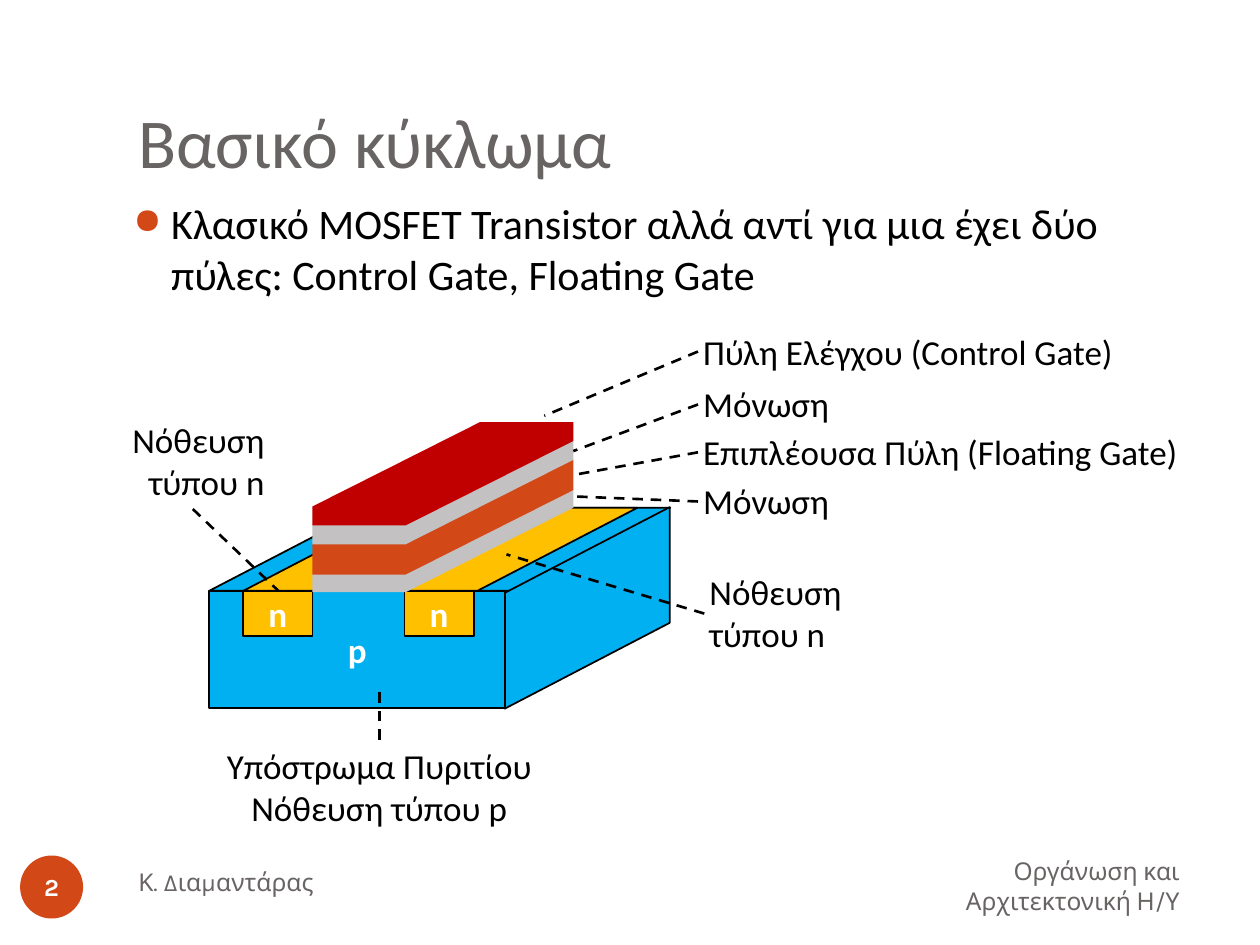
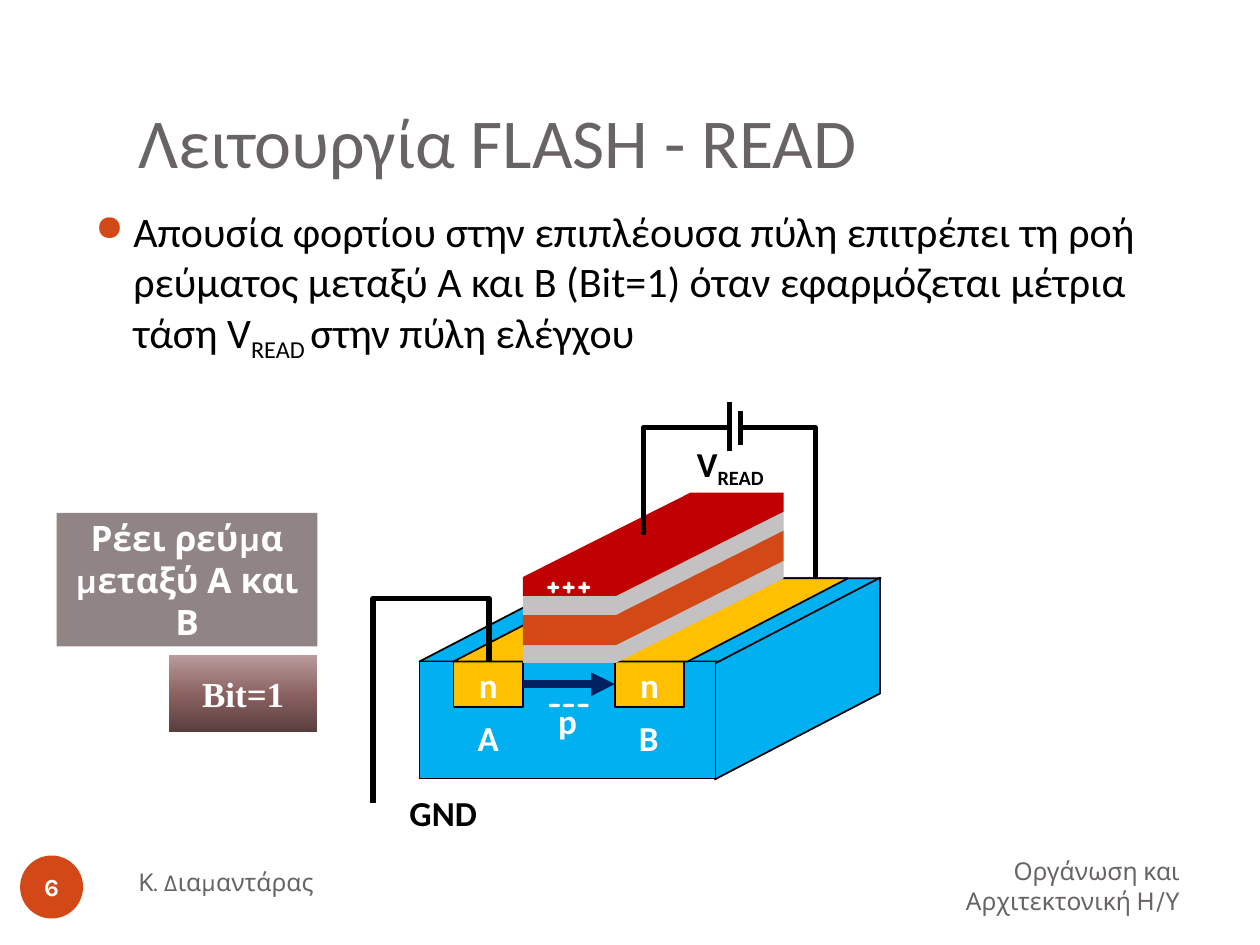
from copy import deepcopy
from dataclasses import dataclass

from lxml import etree
from pptx import Presentation
from pptx.dml.color import RGBColor
from pptx.enum.dml import MSO_LINE_DASH_STYLE as Dash
from pptx.enum.shapes import MSO_CONNECTOR as Connector, MSO_SHAPE as Shape
from pptx.enum.text import MSO_ANCHOR as Anchor, PP_ALIGN as Align
from pptx.oxml.ns import qn
from pptx.util import Inches, Pt


@dataclass(frozen=True)
class Theme:
    accent: str = "D34817"
    grey: str = "696464"
    black: str = "000000"
    white: str = "FFFFFF"
    silicon: str = "00B0F0"
    doping: str = "FFC000"
    insulation: str = "C3C1C1"
    control_gate: str = "C00000"
    current: str = "002060"
    note: str = "918485"
    bit_stops: tuple = ((0, "593E3E"), (0.48, "8A6161"), (1, "B99B9B"))
    font: str = "Calibri"
    footer_font: str = "Karla"
    charge_font: str = "Comic Neue"
    bit_font: str = "Times New Roman"
    title_size: int = 40
    body_size: int = 24
    label_size: int = 20
    footer_size: int = 14


class SlideBuilder:
    def __init__(self, deck, theme):
        self.deck = deck
        self.theme = theme
        self.page = None

    def start(self, title, number):
        theme = self.theme
        self.page = self.deck.slides.add_slide(self.deck.slide_layouts[6])
        self.text(1, 0.3, 8.5, 1.25, title, size=theme.title_size,
                  color=theme.grey, anchor=Anchor.BOTTOM, insets=(0.1, 0.05, 0.1, 0.1))
        footer = dict(size=theme.footer_size, font=theme.footer_font,
                      color=theme.grey, anchor=Anchor.MIDDLE, insets=(0.1, 0.05, 0.1, 0.05))
        self.text(6.75, 6.77, 2.71, 0.52, "Οργάνωση και Αρχιτεκτονική Η/Υ",
                  align=Align.RIGHT, **footer)
        self.text(1, 6.75, 4.33, 0.5, "Κ. Διαμαντάρας", **footer)
        badge = self.shape(Shape.OVAL, 0.16, 6.79, 0.5, 0.5, theme.accent)
        self.fill_text(badge, number, size=theme.footer_size, font=theme.footer_font,
                       color=theme.white, bold=True, align=Align.CENTER,
                       anchor=Anchor.MIDDLE, insets=(0, 0, 0, 0))

    def fill_text(self, box, content, size=None, font=None, color=None, bold=False,
                  align=Align.LEFT, anchor=Anchor.TOP, insets=(0.04, 0.04, 0.04, 0.04)):
        frame = box.text_frame
        frame.word_wrap = True
        frame.vertical_anchor = anchor
        (frame.margin_left, frame.margin_top,
         frame.margin_right, frame.margin_bottom) = map(Inches, insets)
        if isinstance(content, str):
            frame.text = content
        else:
            for index, part in enumerate(content):
                span = frame.paragraphs[0].add_run()
                span.text = part
                if index % 2:
                    span.font._element.set("baseline", "-25000")
        for para in frame.paragraphs:
            para.alignment = align
            for span in para.runs:
                span.font.size = Pt(size or self.theme.label_size)
                span.font.name = font or self.theme.font
                span.font.bold = bold
                span.font.color.rgb = RGBColor.from_string(color or self.theme.black)

    def text(self, left, top, width, height, content, **style):
        box = self.page.shapes.add_textbox(*map(Inches, (left, top, width, height)))
        self.fill_text(box, content, **style)
        return box

    def body(self, left, top, width, height, content):
        box = self.text(left, top, width, height, content, size=self.theme.body_size,
                        insets=(0.1, 0.05, 0.1, 0.05))
        properties = box.text_frame.paragraphs[0]._p.get_or_add_pPr()
        properties.set("marL", str(Inches(0.3)))
        properties.set("indent", str(-Inches(0.3)))
        color = etree.SubElement(properties, qn("a:buClr"))
        etree.SubElement(color, qn("a:srgbClr"), val=self.theme.accent)
        etree.SubElement(properties, qn("a:buSzPct"), val="85000")
        etree.SubElement(properties, qn("a:buChar"), char="●")

    def paint(self, shape, fill, outlined=False):
        shape.shadow.inherit = False
        shape.fill.solid()
        shape.fill.fore_color.rgb = RGBColor.from_string(fill)
        if outlined:
            shape.line.color.rgb = RGBColor.from_string(self.theme.black)
            shape.line.width = Pt(1)
        else:
            shape.line.fill.background()

    def shape(self, kind, left, top, width, height, fill, outlined=False, adjust=None):
        shape = self.page.shapes.add_shape(kind, *map(Inches, (left, top, width, height)))
        self.paint(shape, fill, outlined)
        if adjust is not None:
            shape.adjustments[0] = adjust
        return shape

    def caption_block(self, left, top, width, height, fill, content, outlined=False, **style):
        block = self.shape(Shape.RECTANGLE, left, top, width, height, fill, outlined)
        self.fill_text(block, content, color=self.theme.white, bold=True, align=Align.CENTER,
                       anchor=Anchor.MIDDLE, insets=(0.1, 0.05, 0.1, 0.05), **style)
        return block

    def gradient(self, shape, stops):
        shape.fill.gradient()
        shape.fill.gradient_angle = 90
        stop_list = shape._element.spPr.find(".//" + qn("a:gsLst"))
        stop_list.insert(1, deepcopy(stop_list[0]))
        for stop, (position, color) in zip(shape.fill.gradient_stops, stops):
            stop.position = position
            stop.color.rgb = RGBColor.from_string(color)

    def line(self, start, end, width, color=None, dashed=False, arrow=False,
             kind=Connector.STRAIGHT):
        line = self.page.shapes.add_connector(kind, *map(Inches, (*start, *end)))
        line.line.width = Pt(width)
        line.line.color.rgb = RGBColor.from_string(color or self.theme.black)
        if dashed:
            line.line.dash_style = Dash.DASH
        if arrow:
            etree.SubElement(line.line._get_or_add_ln(), qn("a:tailEnd"), type="triangle")
        etree.SubElement(line._element.spPr, qn("a:effectLst"))
        return line

    def wire(self, left, top, width, height, rotation, flips, bend):
        wire = self.line((left, top), (left + width, top + height), 3, kind=Connector.ELBOW)
        properties = wire._element.spPr
        frame = properties.find(qn("a:xfrm"))
        frame.set("rot", str(rotation * 60000))
        for flip in flips:
            frame.set("flip" + flip, "1")
        guides = properties.find(qn("a:prstGeom")).find(qn("a:avLst"))
        etree.SubElement(guides, qn("a:gd"), name="adj1", fmla=f"val {round(bend * 100000)}")

    def gate_layer(self, left, top, thickness, fill):
        width, run, rise = 2.07, 1.33, 0.67
        right, bottom = left + width, top + rise + thickness
        corners = [(left + run, top), (right, top), (right, top + thickness),
                   (right - run, bottom), (left, bottom), (left, top + rise)]
        points = [(Inches(x), Inches(y)) for x, y in corners]
        builder = self.page.shapes.build_freeform(*points[0])
        builder.add_line_segments(points[1:], close=True)
        self.paint(builder.convert_to_shape(), fill)

    def transistor(self, left, top):
        theme = self.theme
        slant = dict(outlined=True, adjust=1.927)
        self.shape(Shape.PARALLELOGRAM, left, top - 0.66, 3.66, 0.66, theme.silicon, **slant)
        side = self.shape(Shape.PARALLELOGRAM, left + 2.2, top - 0.52, 1.6, 1.31,
                          theme.silicon, outlined=True, adjust=0.52)
        side.rotation = 90
        side._element.spPr.find(qn("a:xfrm")).set("flipV", "1")
        self.caption_block(left, top, 2.35, 0.93, theme.silicon, "p", outlined=True)
        wells = (left + 0.27, left + 1.55)
        for well in wells:
            self.caption_block(well, top, 0.55, 0.36, theme.doping, "n", outlined=True)
        for well in reversed(wells):
            self.shape(Shape.PARALLELOGRAM, well, top - 0.66, 1.85, 0.66, theme.doping, **slant)
        for rise, thickness, fill in ((0.81, 0.15, theme.insulation),
                                      (1.04, 0.24, theme.accent),
                                      (1.19, 0.15, theme.insulation),
                                      (1.34, 0.15, theme.control_gate)):
            self.gate_layer(left + 0.82, top - rise, thickness, fill)


def basic_circuit(slide):
    slide.start("Βασικό κύκλωμα", "2")
    slide.body(0.96, 1.52, 8.5, 1, "Κλασικό MOSFET Transistor αλλά αντί για μια έχει "
                                   "δύο πύλες: Control Gate, Floating Gate")
    slide.transistor(1.66, 4.69)
    for top, label, target in ((2.57, "Πύλη Ελέγχου (Control Gate)", (4.32, 3.3)),
                               (2.99, "Μόνωση", (4.55, 3.58)),
                               (3.37, "Επιπλέουσα Πύλη (Floating Gate)", (4.55, 3.77)),
                               (3.76, "Μόνωση", (4.55, 3.94))):
        slide.text(5.54, top, 3.93, 0.44, label, insets=(0.04, 0.05, 0.04, 0.05))
        slide.line((5.54, top + 0.22), target, 1.5, dashed=True)
    doping = "Νόθευση\nτύπου n"
    for left, top, width, label, align, start, end in (
            (5.59, 4.49, 1.21, doping, Align.LEFT, (5.59, 4.87), (4.02, 4.4)),
            (0.93, 3.28, 1.21, doping, Align.RIGHT, (1.53, 4.04), (2.21, 4.69)),
            (1.7, 5.87, 2.62, "Υπόστρωμα Πυριτίου\nΝόθευση τύπου p", Align.CENTER,
             (3.01, 5.87), (3.01, 5.47))):
        slide.text(left, top, width, 0.75, label, align=align)
        slide.line(start, end, 1.5, dashed=True)


def flash_read(slide):
    theme = slide.theme
    slide.start("Λειτουργία FLASH - READ", "6")
    slide.body(0.66, 1.58, 8.84, 2.4, (
        "Απουσία φορτίου στην επιπλέουσα πύλη επιτρέπει τη ροή ρεύματος μεταξύ Α και Β "
        "(Bit=1) όταν εφαρμόζεται μέτρια τάση V", "READ ", "στην πύλη ελέγχου"))
    slide.transistor(3.33, 5.25)
    for left, top, width, label, color in ((3.75, 5.64, 0.31, "A", theme.white),
                                           (5.03, 5.64, 0.31, "B", theme.white),
                                           (3.21, 6.23, 0.8, "GND", theme.black),
                                           (5.49, 3.46, 0.9, ("V", "READ"), theme.black)):
        slide.text(left, top, width, 0.44, label, color=color, bold=True,
                   insets=(0.04, 0.05, 0.04, 0.05))
    slide.wire(2.86, 5.35, 1.12, 0.92, 90, "HV", 1.448)
    slide.wire(5.02, 3.48, 0.85, 0.68, 90, "HV", 1.004)
    slide.wire(5.57, 3.69, 1.21, 0.59, 270, "V", 0.99)
    slide.line((5.88, 3.53), (5.88, 3.26), 3)
    slide.line((5.79, 3.58), (5.79, 3.19), 3)
    for top, charge in ((4.41, "+++"), (5.34, "---")):
        slide.text(4.13, top, 0.77, 0.44, charge, font=theme.charge_font, color=theme.white,
                   bold=True, align=Align.CENTER, insets=(0, 0.05, 0, 0.05))
    slide.line((4.15, 5.43), (4.88, 5.43), 4.5, color=theme.current, arrow=True)
    bit = slide.caption_block(1.34, 5.2, 1.18, 0.61, theme.note, "Bit=1", font=theme.bit_font)
    slide.gradient(bit, theme.bit_stops)
    slide.caption_block(0.45, 4.07, 2.07, 1.06, theme.note,
                        "Ρέει ρεύμα\nμεταξύ Α και Β", font=theme.footer_font)


def main():
    deck = Presentation()
    deck.slide_width = Inches(10)
    deck.slide_height = Inches(7.5)
    slide = SlideBuilder(deck, Theme())
    basic_circuit(slide)
    flash_read(slide)
    deck.save("out.pptx")


if __name__ == "__main__":
    main()
